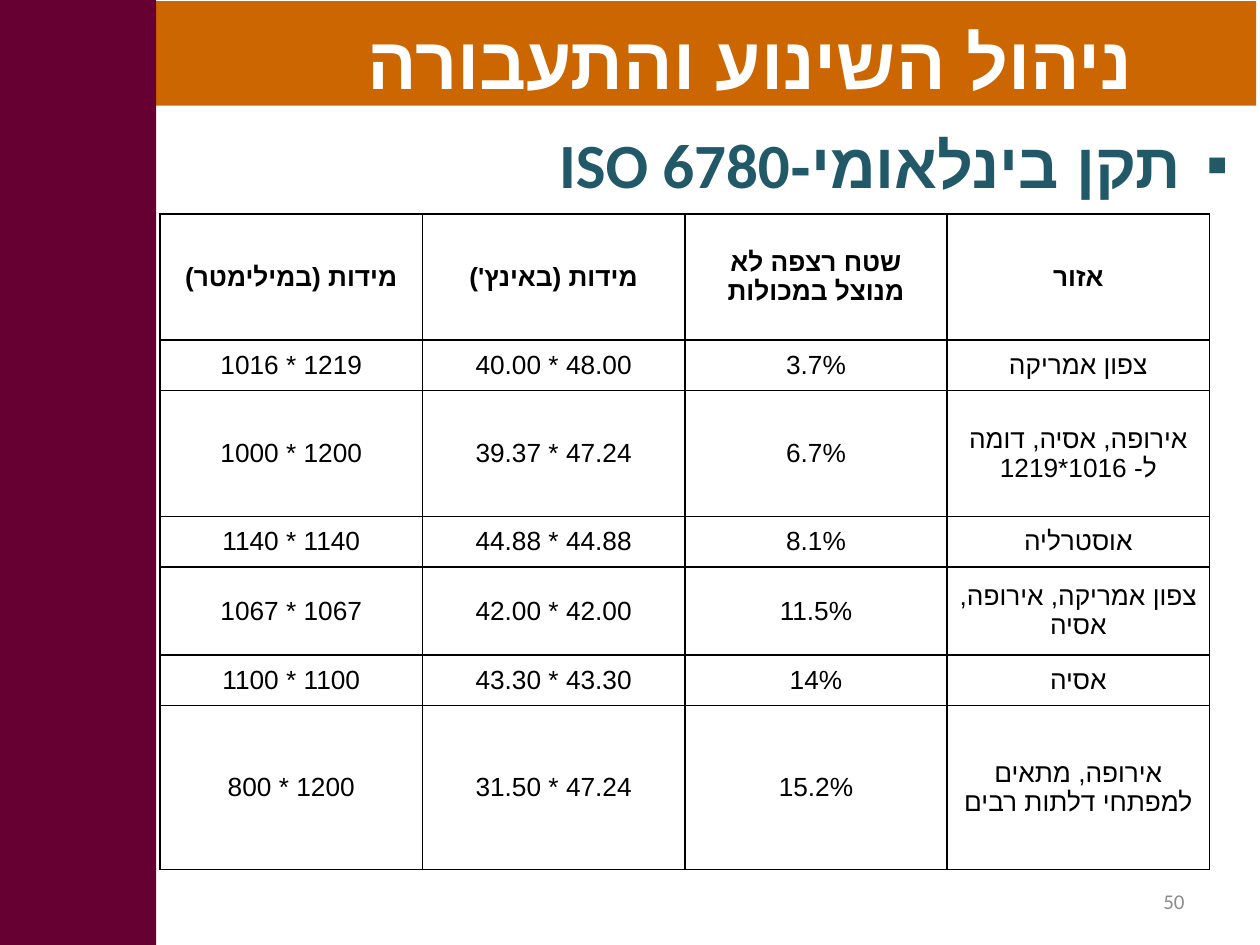
from lxml import etree
from pptx import Presentation
from pptx.dml.color import RGBColor
from pptx.enum.shapes import MSO_SHAPE
from pptx.enum.text import MSO_ANCHOR, PP_ALIGN
from pptx.oxml.ns import qn
from pptx.util import Inches, Pt

RECT = MSO_SHAPE.RECTANGLE
MIDDLE, TOP = MSO_ANCHOR.MIDDLE, MSO_ANCHOR.TOP
CENTER, RIGHT = PP_ALIGN.CENTER, PP_ALIGN.RIGHT

ORANGE = RGBColor(0xCC, 0x66, 0x00)
MAROON = RGBColor(0x66, 0x00, 0x33)
TEAL = RGBColor(0x21, 0x59, 0x68)
GRAY = RGBColor(0x8C, 0x8C, 0x8C)
WHITE = RGBColor(0xFF, 0xFF, 0xFF)
BLACK = RGBColor(0x00, 0x00, 0x00)

prs = Presentation()
prs.slide_width, prs.slide_height = Inches(10), Inches(7.5)
W, H = prs.slide_width, prs.slide_height
COL, ROW = W / 100, H / 75
s = prs.slides.add_slide(prs.slide_layouts[6])


def write(tf, text, size=15, font="Calibri", color=BLACK, bold=False,
          align=CENTER, rtl=False, bullet=None):
    p = tf.paragraphs[0]
    p.alignment = align
    pPr = p._p.get_or_add_pPr()
    if rtl:
        pPr.set("rtl", "1")
    if bullet:
        pPr.set("marR", "0")
        pPr.set("marL", str(int(3.8 * COL)))
        pPr.set("indent", str(int(-3.8 * COL)))
        etree.SubElement(pPr, qn("a:buFont"), typeface="Arial")
        etree.SubElement(pPr, qn("a:buChar"), char=bullet)
    r = p.add_run()
    r.text = text
    r.font.size, r.font.bold, r.font.name = Pt(size), bold, font
    r.font.color.rgb = color
    etree.SubElement(r._r.get_or_add_rPr(), qn("a:cs"), typeface="Arial")


def add_text(x, y, w, h, text, anchor=MIDDLE, **fmt):
    sp = s.shapes.add_textbox(int(x * COL), int(y * ROW), int(w * COL), int(h * ROW))
    tf = sp.text_frame
    tf.word_wrap = True
    tf.vertical_anchor = anchor
    write(tf, text, **fmt)


for x, y, w, h, color in [(12.4, 0.1, 87.3, 8.3, ORANGE), (0, 0, 12.4, 75, MAROON)]:
    sp = s.shapes.add_shape(RECT, int(x * COL), int(y * ROW), int(w * COL), int(h * ROW))
    sp.shadow.inherit = False
    sp.fill.solid()
    sp.fill.fore_color.rgb = color
    sp.line.fill.background()

add_text(17.1, 0, 84.9, 9.5, "ניהול השינוע והתעבורה",
         size=42, font="Arial", color=WHITE, bold=True)
add_text(71.7, 69.5, 23.3, 4, "50", size=12, color=GRAY, align=RIGHT)
add_text(17.1, 9.5, 81.4, 7, "תקן בינלאומי-ISO 6780", anchor=TOP,
         size=36, color=TEAL, bold=True, align=RIGHT, rtl=True, bullet="▪")

rows = [
    (10, "מידות (במילימטר)", "מידות (באינץ')", "שטח רצפה לא מנוצל במכולות", "אזור"),
    (4, "1219 * 1016", "48.00 * 40.00", "3.7%", "צפון אמריקה"),
    (10, "1200 * 1000", "47.24 * 39.37", "6.7%", "אירופה, אסיה, דומה ל- 1016*1219"),
    (4, "1140 * 1140", "44.88 * 44.88", "8.1%", "אוסטרליה"),
    (7, "1067 * 1067", "42.00 * 42.00", "11.5%", "צפון אמריקה, אירופה, אסיה"),
    (4, "1100 * 1100", "43.30 * 43.30", "14%", "אסיה"),
    (13, "1200 * 800", "47.24 * 31.50", "15.2%", "אירופה, מתאים למפתחי דלתות רבים"),
]
table = s.shapes.add_table(len(rows), 4, int(12.7 * COL), int(17 * ROW),
                           int(83.3 * COL), int(52 * ROW)).table
table.first_row = table.horz_banding = False
for i, (height, *texts) in enumerate(rows):
    table.rows[i].height = int(height * ROW)
    for j, text in enumerate(texts):
        cell = table.cell(i, j)
        cell.vertical_anchor = MIDDLE
        cell.margin_left = cell.margin_right = int(0.9 * COL)
        cell.margin_top = cell.margin_bottom = int(0.4 * ROW)
        write(cell.text_frame, text, bold=i == 0, rtl=True)
        tcPr = cell._tc.get_or_add_tcPr()
        for side in ("lnL", "lnR", "lnT", "lnB"):
            ln = etree.SubElement(tcPr, qn(f"a:{side}"), w=str(Pt(1)))
            fill = etree.SubElement(ln, qn("a:solidFill"))
            etree.SubElement(fill, qn("a:srgbClr"), val=str(BLACK))
        cell.fill.background()

prs.save("out.pptx")
